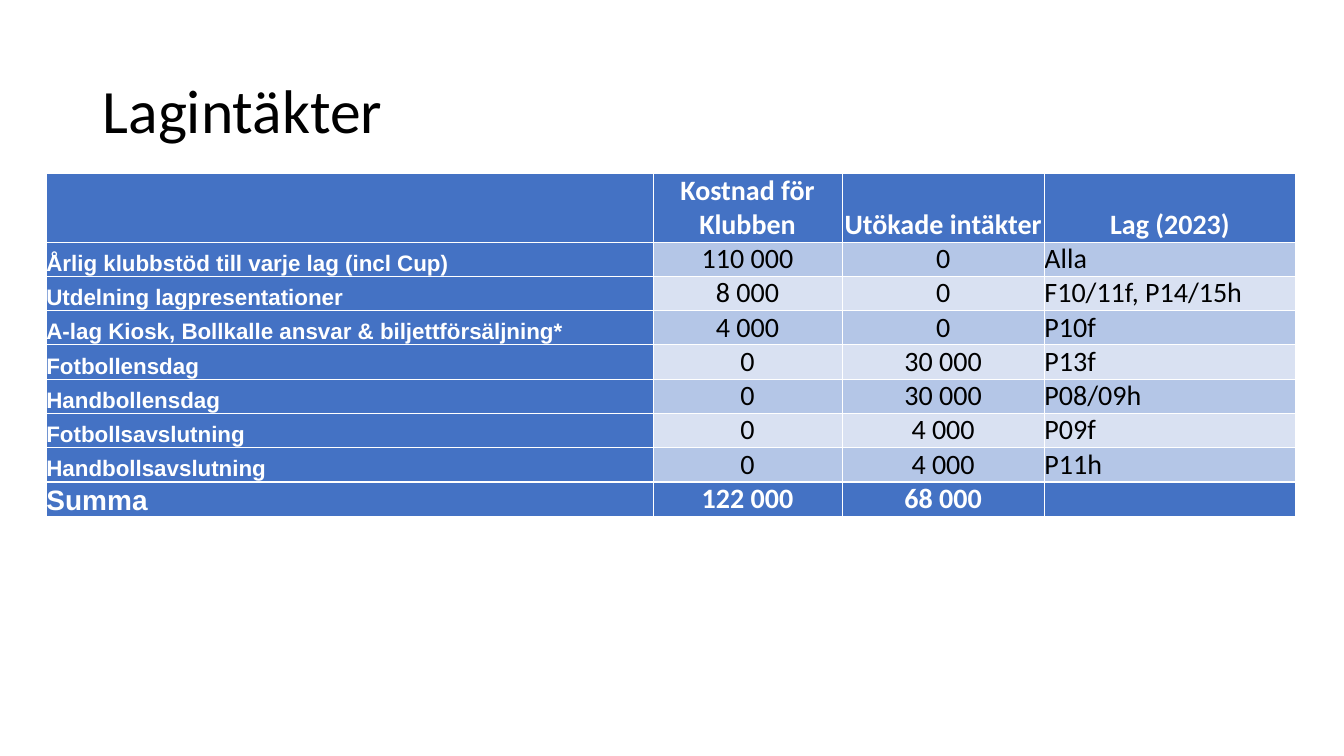
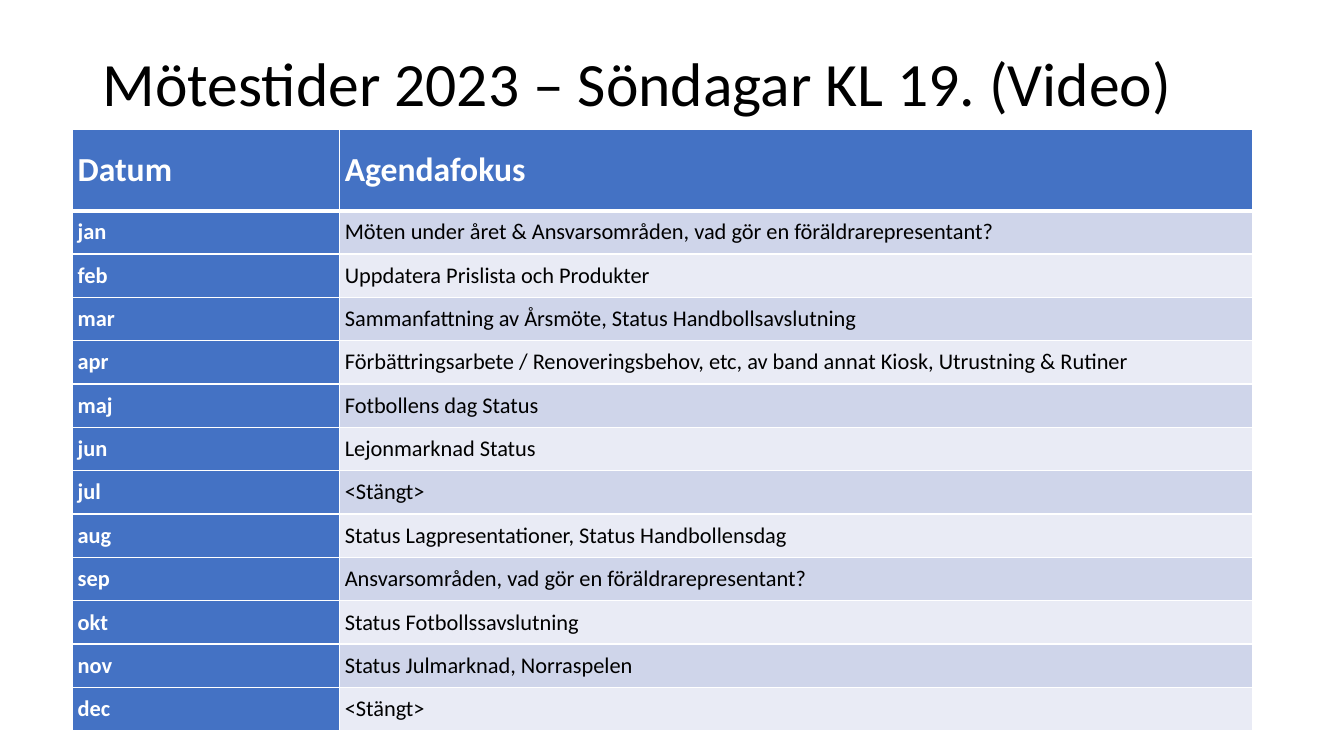
from lxml import etree
from pptx import Presentation
from pptx.dml.color import RGBColor
from pptx.enum import text as t
from pptx.oxml import ns
from pptx.util import Inches, Pt

BLUE = RGBColor(0x44, 0x72, 0xC4)
WHITE = RGBColor(0xFF, 0xFF, 0xFF)
BLACK = RGBColor(0, 0, 0)
INCOME_BANDS = RGBColor(0xB4, 0xC6, 0xE7), RGBColor(0xD9, 0xE1, 0xF2)
AGENDA_BANDS = RGBColor(0xCF, 0xD5, 0xEA), RGBColor(0xE9, 0xEB, 0xF5)
BODY_FONT, LABEL_FONT = "Calibri", "Arial"
LEFT, CENTER = t.PP_ALIGN.LEFT, t.PP_ALIGN.CENTER

INCOME = [
    ("", "Kostnad för Klubben", "Utökade intäkter", "Lag (2023)"),
    ("Årlig klubbstöd till varje lag (incl Cup)", "110 000", "0", "Alla"),
    ("Utdelning lagpresentationer", "8 000", "0", "F10/11f, P14/15h"),
    ("A-lag Kiosk, Bollkalle ansvar & biljettförsäljning*", "4 000", "0", "P10f"),
    ("Fotbollensdag", "0", "30 000", "P13f"),
    ("Handbollensdag", "0", "30 000", "P08/09h"),
    ("Fotbollsavslutning", "0", "4 000", "P09f"),
    ("Handbollsavslutning", "0", "4 000", "P11h"),
    ("Summa", "122 000", "68 000", ""),
]
AGENDA = [
    ("Datum", "Agendafokus"),
    ("jan", "Möten under året & Ansvarsområden, vad gör en föräldrarepresentant?"),
    ("feb", "Uppdatera Prislista och Produkter"),
    ("mar", "Sammanfattning av Årsmöte, Status Handbollsavslutning"),
    ("apr", "Förbättringsarbete / Renoveringsbehov, etc, av band annat Kiosk, Utrustning & Rutiner"),
    ("maj", "Fotbollens dag Status"),
    ("jun", "Lejonmarknad Status"),
    ("jul", "<Stängt>"),
    ("aug", "Status Lagpresentationer, Status Handbollensdag"),
    ("sep", "Ansvarsområden, vad gör en föräldrarepresentant?"),
    ("okt", "Status Fotbollssavslutning"),
    ("nov", "Status Julmarknad, Norraspelen"),
    ("dec", "<Stängt>"),
]


def add_run(paragraph, words, size, color, font=BODY_FONT, bold=False):
    run = paragraph.add_run()
    run.text = words
    run.font.size, run.font.name, run.font.bold = Pt(size), font, bold
    run.font.color.rgb = color


def add_title(slide, words, top):
    box = slide.shapes.add_textbox(Inches(0.92), Inches(top), Inches(11.5), Inches(1.45))
    frame = box.text_frame
    frame.word_wrap = True
    frame.vertical_anchor = t.MSO_ANCHOR.MIDDLE
    frame.paragraphs[0].line_spacing = 0.9
    add_run(frame.paragraphs[0], words, 44, BLACK)


def set_borders(cell, **widths):
    """Draw white cell edges; widths in points are keyed L, R, T, B."""
    properties = cell._tc.get_or_add_tcPr()
    for side in "LRTB":
        line = etree.SubElement(properties, ns.qn(f"a:ln{side}"), w=str(Pt(widths[side])))
        fill = etree.SubElement(line, ns.qn("a:solidFill"))
        etree.SubElement(fill, ns.qn("a:srgbClr"), val=str(WHITE))


def add_grid(slide, box, rows, columns, heights, bands, style, side_inset, anchor, line, rule):
    """Build a table with a blue header and label column.

    style(row, column) gives size, font and alignment;
    rule is (row, width) of the heavy line under that row.
    """
    left, top = box
    table = slide.shapes.add_table(
        len(rows), len(columns), Inches(left), Inches(top),
        Inches(sum(columns)), Inches(sum(heights))).table
    for column, width in zip(table.columns, columns):
        column.width = Inches(width)
    for row, height in zip(table.rows, heights):
        row.height = Inches(height)

    rule_row, rule_width = rule
    for r, values in enumerate(rows):
        for c, words in enumerate(values):
            cell = table.cell(r, c)
            accent = r == 0 or c == 0 or values[0] == "Summa"
            cell.margin_left = cell.margin_right = Inches(side_inset)
            cell.margin_top = cell.margin_bottom = 0
            cell.vertical_anchor = anchor
            set_borders(cell, L=line, R=line,
                        T=rule_width if r == rule_row + 1 else line,
                        B=rule_width if r == rule_row else line)
            cell.fill.solid()
            cell.fill.fore_color.rgb = BLUE if accent else bands[(r - 1) % 2]
            if words:
                size, font, alignment = style(r, c)
                paragraph = cell.text_frame.paragraphs[0]
                paragraph.alignment = alignment
                add_run(paragraph, words, size, WHITE if accent else BLACK, font, accent)


def income_style(row, column):
    if column == 0:
        return (20 if row == len(INCOME) - 1 else 16), LABEL_FONT, LEFT
    return 20, BODY_FONT, LEFT if column == 3 and row else CENTER


def agenda_style(row, column):
    return (16 if row else 24), BODY_FONT, LEFT


def income_slide(slide):
    add_title(slide, "Lagintäkter", 0.4)
    add_grid(slide, (0.46, 1.72), INCOME, [6.02, 1.87, 2.01, 2.49],
             [0.68] + [0.34] * (len(INCOME) - 1), INCOME_BANDS, income_style,
             0, t.MSO_ANCHOR.BOTTOM, 0.5, (len(INCOME) - 2, 1.5))


def agenda_slide(slide):
    add_title(slide, "Mötestider 2023 – Söndagar KL 19. (Video)", 0.13)
    add_grid(slide, (0.72, 1.28), AGENDA, [2.65, 9.05],
             [0.81] + [0.43] * (len(AGENDA) - 1), AGENDA_BANDS, agenda_style,
             0.05, t.MSO_ANCHOR.MIDDLE, 1, (0, 3))


def main():
    deck = Presentation()
    deck.slide_width, deck.slide_height = Inches(13.33), Inches(7.5)
    for build in (income_slide, agenda_slide):
        build(deck.slides.add_slide(deck.slide_layouts[6]))
    deck.save("out.pptx")


if __name__ == "__main__":
    main()
